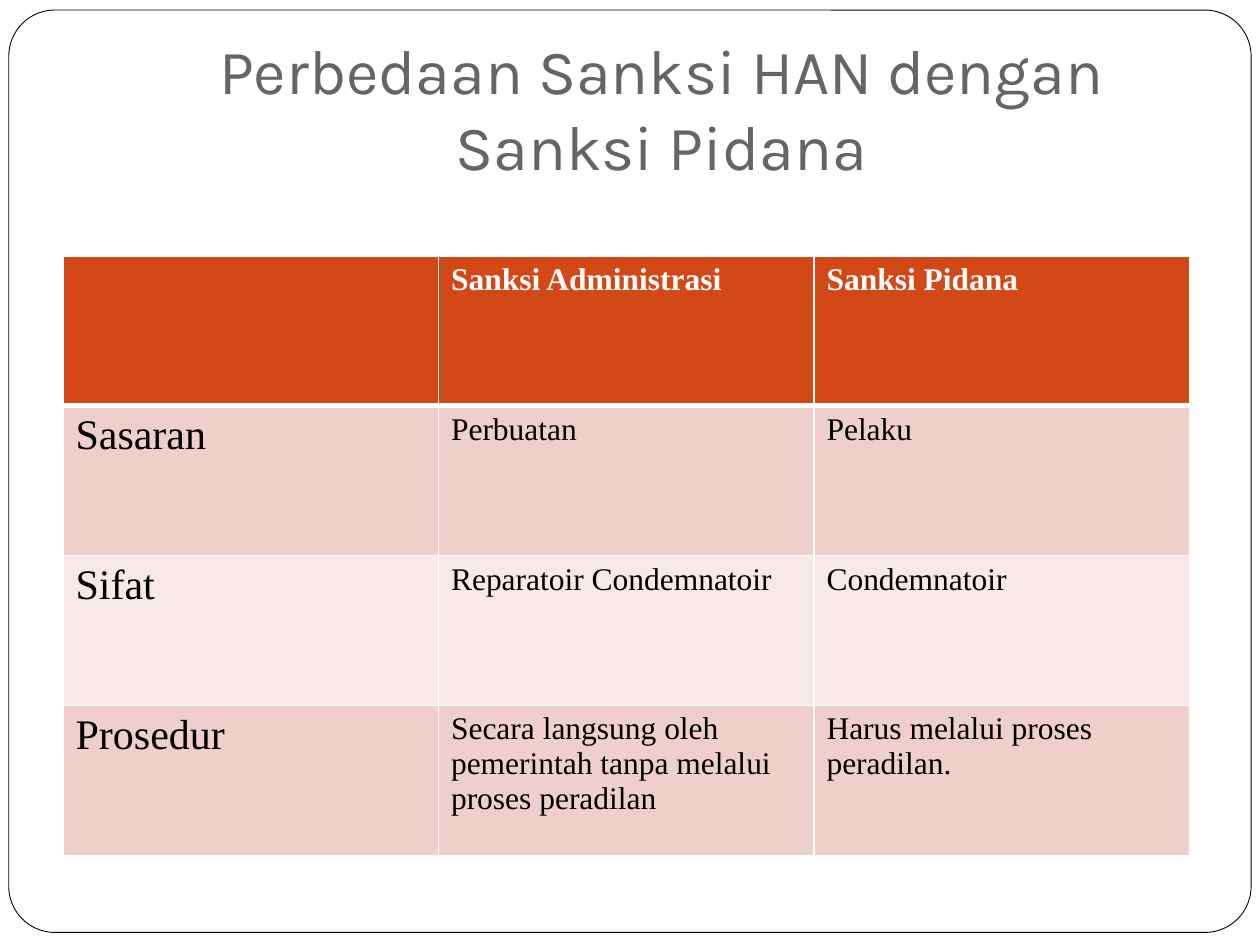
"""Build a slide comparing administrative and criminal sanctions in a table."""
import pptx
import pptx.dml.color
import pptx.enum.shapes
import pptx.enum.text
import pptx.oxml
import pptx.oxml.ns
import pptx.util

THEME = {
    "paper": "FFFFFF", "outline": "000000", "title": "696464", "text": "000000",
    "header": "D34817", "header_text": "FFFFFF", "bands": ("EFCFCC", "F7E9E8"),
    "rule": "FFFFFF", "title_font": "Karla", "body_font": "Times New Roman",
    "title_size": 36, "label_size": 24, "body_size": 18,
}
ROWS = [
    ("", "Sanksi Administrasi", "Sanksi Pidana"),
    ("Sasaran", "Perbuatan", "Pelaku"),
    ("Sifat", "Reparatoir Condemnatoir", "Condemnatoir"),
    ("Prosedur", "Secara langsung oleh pemerintah tanpa melalui proses peradilan",
     "Harus melalui proses peradilan."),
]
COLUMN_WIDTH = pptx.util.Inches(2.98)
ROW_HEIGHT = pptx.util.Inches(1.19)


def add_run(paragraph, text, font, size, color, bold=False):
    """Add one formatted run."""
    run = paragraph.add_run()
    run.text = text
    run.font.name = font
    run.font.size = pptx.util.Pt(size)
    run.font.bold = bold
    run.font.color.rgb = pptx.dml.color.RGBColor.from_string(color)


def set_borders(cell, bottom_width):
    """Rule all four sides of a cell, the bottom one with its own width."""
    properties = cell._tc.get_or_add_tcPr()
    widths = {"L": 1, "R": 1, "T": 1, "B": bottom_width}
    for position, (side, width) in enumerate(widths.items()):
        properties.insert(position, pptx.oxml.parse_xml(
            f'<a:ln{side} {pptx.oxml.ns.nsdecls("a")} w="{pptx.util.Pt(width)}">'
            f'<a:solidFill><a:srgbClr val="{THEME["rule"]}"/></a:solidFill></a:ln{side}>'))


presentation = pptx.Presentation()
presentation.slide_width = pptx.util.Inches(10)
presentation.slide_height = pptx.util.Inches(7.5)
slide = presentation.slides.add_slide(presentation.slide_layouts[5])
slide.background.fill.solid()
slide.background.fill.fore_color.rgb = pptx.dml.color.RGBColor.from_string(THEME["paper"])

frame = slide.shapes.add_shape(
    pptx.enum.shapes.MSO_SHAPE.ROUNDED_RECTANGLE,
    *(pptx.util.Inches(length) for length in (0.07, 0.08, 9.86, 7.32)))
frame.adjustments[0] = 0.05
frame.shadow.inherit = False
frame.fill.solid()
frame.fill.fore_color.rgb = pptx.dml.color.RGBColor.from_string(THEME["paper"])
frame.line.color.rgb = pptx.dml.color.RGBColor.from_string(THEME["outline"])
frame.line.width = pptx.util.Pt(0.5)

title = slide.shapes.title
title._element.addprevious(frame._element)
title.left, title.top, title.width, title.height = (
    pptx.util.Inches(length) for length in (1, 0.3, 8.5, 1.25))
heading = title.text_frame
heading.word_wrap = True
heading.auto_size = pptx.enum.text.MSO_AUTO_SIZE.NONE
heading.vertical_anchor = pptx.enum.text.MSO_ANCHOR.BOTTOM
heading.margin_bottom = pptx.util.Inches(0.1)
heading.paragraphs[0].alignment = pptx.enum.text.PP_ALIGN.CENTER
add_run(heading.paragraphs[0], "Perbedaan Sanksi HAN dengan Sanksi Pidana",
        THEME["title_font"], THEME["title_size"], THEME["title"])

comparison = slide.shapes.add_table(
    len(ROWS), len(ROWS[0]), pptx.util.Inches(0.5), pptx.util.Inches(2.03),
    COLUMN_WIDTH * len(ROWS[0]), ROW_HEIGHT * len(ROWS)).table
for row_index, row in enumerate(ROWS):
    is_header = row_index == 0
    fill = THEME["header"] if is_header else THEME["bands"][(row_index - 1) % 2]
    color = THEME["header_text"] if is_header else THEME["text"]
    for column_index, text in enumerate(row):
        cell = comparison.cell(row_index, column_index)
        cell.fill.solid()
        cell.fill.fore_color.rgb = pptx.dml.color.RGBColor.from_string(fill)
        set_borders(cell, 3 if is_header else 1)
        if text:
            size = THEME["body_size"] if column_index else THEME["label_size"]
            add_run(cell.text_frame.paragraphs[0], text, THEME["body_font"],
                    size, color, is_header)

presentation.save("out.pptx")
